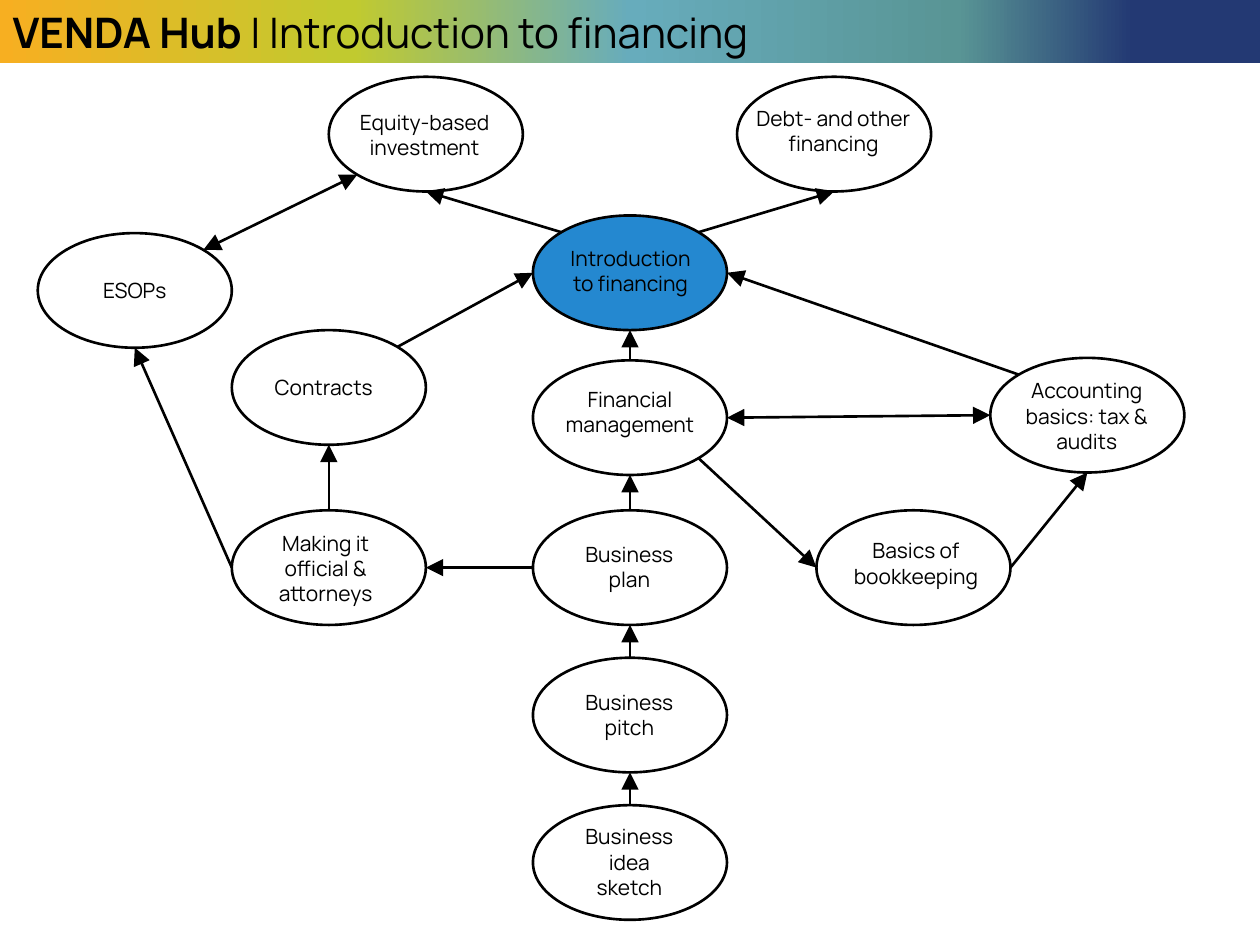
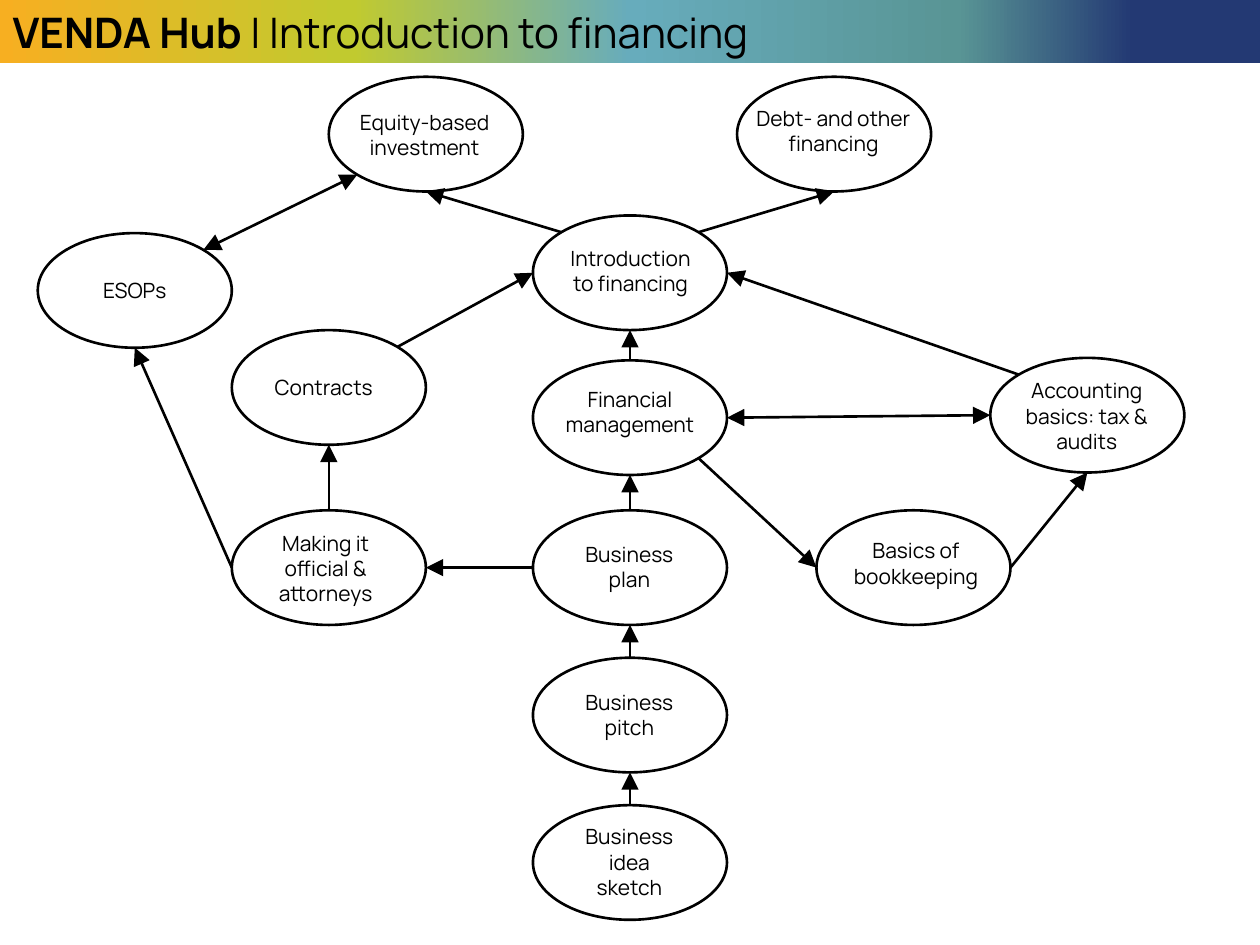
from collections import namedtuple
from math import cos, pi, sin

from lxml.etree import SubElement
from pptx import Presentation
from pptx.dml.color import RGBColor
from pptx.enum.shapes import MSO_CONNECTOR, MSO_SHAPE
from pptx.enum.text import MSO_ANCHOR, MSO_AUTO_SIZE, PP_ALIGN
from pptx.oxml.ns import qn
from pptx.util import Inches, Pt

BLACK = RGBColor(0x00, 0x00, 0x00)
HIGHLIGHT = RGBColor(0x24, 0x88, 0xD0)
BAND_STOPS = [
    (0, RGBColor(0xF7, 0xAF, 0x21)),
    (28, RGBColor(0xC1, 0xCA, 0x2F)),
    (50, RGBColor(0x67, 0xAC, 0xBC)),
    (76, RGBColor(0x59, 0x95, 0x95)),
    (90, RGBColor(0x23, 0x39, 0x73)),
]
FONT = "Manrope"
SLIDE_WIDTH, SLIDE_HEIGHT = 10, 7.5
BAND_HEIGHT = 0.5
OVAL_WIDTH, OVAL_HEIGHT = 1.54, 0.91
LINE_WIDTH = 1.5
TOP, TOP_LEFT, LEFT, BOTTOM_LEFT, BOTTOM, BOTTOM_RIGHT, RIGHT, TOP_RIGHT = range(8)

Topic = namedtuple("Topic", "left top label label_dx label_dy label_width lines")
TOPICS = {
    "idea": Topic(4.23, 5.89, "Business idea sketch", 0.27, 0.1, 0.99, 3),
    "pitch": Topic(4.23, 4.72, "Business pitch", 0.27, 0.2, 0.99, 2),
    "plan": Topic(4.23, 3.55, "Business plan", 0.27, 0.2, 0.99, 2),
    "intro": Topic(4.23, 1.21, "Introduction to financing", 0.14, 0.19, 1.27, 2),
    "bookkeeping": Topic(6.48, 3.55, "Basics of bookkeeping", 0.15, 0.17, 1.28, 2),
    "official": Topic(1.84, 3.55, "Making it official & attorneys", 0.23, 0.11, 1.03, 3),
    "accounting": Topic(7.86, 2.34, "Accounting basics: tax & audits", 0.13, 0.11, 1.27, 3),
    "contracts": Topic(1.84, 2.12, "Contracts", 0.1, 0.3, 1.26, 1),
    "equity": Topic(2.61, 0.11, "Equity-based\ninvestment", 0.06, 0.21, 1.4, 2),
    "debt": Topic(5.85, 0.11, "Debt- and other financing", 0.03, 0.18, 1.47, 2),
    "management": Topic(4.23, 2.36, "Financial management", 0.03, 0.16, 1.48, 2),
    "esops": Topic(0.3, 1.35, "ESOPs", 0.14, 0.3, 1.26, 1),
}
LINKS = [
    ("idea", TOP, "pitch", BOTTOM, False),
    ("pitch", TOP, "plan", BOTTOM, False),
    ("plan", TOP, "management", BOTTOM, False),
    ("management", TOP, "intro", BOTTOM, False),
    ("intro", TOP_RIGHT, "debt", BOTTOM, False),
    ("intro", TOP_LEFT, "equity", BOTTOM, False),
    ("plan", LEFT, "official", RIGHT, False),
    ("management", BOTTOM_RIGHT, "bookkeeping", LEFT, False),
    ("bookkeeping", RIGHT, "accounting", BOTTOM, False),
    ("official", TOP, "contracts", BOTTOM, False),
    ("contracts", TOP_RIGHT, "intro", LEFT, False),
    ("accounting", TOP_LEFT, "intro", RIGHT, False),
    ("equity", BOTTOM_LEFT, "esops", TOP_RIGHT, True),
    ("official", LEFT, "esops", BOTTOM, False),
    ("accounting", LEFT, "management", RIGHT, True),
]


def style_run(run, size, bold=False):
    run.font.name = FONT
    run.font.size = Pt(size)
    run.font.bold = bold
    run.font.color.rgb = BLACK


def add_title_band(slide, left, top, width, height):
    band = slide.shapes.title
    band.left, band.top = Inches(left), Inches(top)
    band.width, band.height = Inches(width), Inches(height)
    band.fill.gradient()
    band.fill.gradient_angle = 0
    stops = band._element.spPr.find(qn("a:gradFill")).find(qn("a:gsLst"))
    for stop in list(stops):
        stops.remove(stop)
    for percent, color in BAND_STOPS:
        stop = SubElement(stops, qn("a:gs"), pos=str(percent * 1000))
        SubElement(stop, qn("a:srgbClr"), val=str(color))

    frame = band.text_frame
    frame.auto_size = MSO_AUTO_SIZE.NONE
    frame.vertical_anchor = MSO_ANCHOR.MIDDLE
    heading = frame.paragraphs[0]
    heading.alignment = PP_ALIGN.LEFT
    for text, bold in [("VENDA Hub ", True), ("| Introduction to financing", False)]:
        run = heading.add_run()
        run.text = text
        style_run(run, 24, bold)


def add_topic(slide, topic, left, top, highlighted):
    oval = slide.shapes.add_shape(
        MSO_SHAPE.OVAL, Inches(left), Inches(top), Inches(OVAL_WIDTH), Inches(OVAL_HEIGHT)
    )
    oval.shadow.inherit = False
    oval.line.color.rgb = BLACK
    oval.line.width = Pt(LINE_WIDTH)
    if highlighted:
        oval.fill.solid()
        oval.fill.fore_color.rgb = HIGHLIGHT
    else:
        oval.fill.background()

    label = slide.shapes.add_textbox(
        Inches(left + topic.label_dx), Inches(top + topic.label_dy),
        Inches(topic.label_width), Inches(0.1 + 0.2 * topic.lines),
    )
    frame = label.text_frame
    frame.word_wrap = True
    frame.auto_size = MSO_AUTO_SIZE.SHAPE_TO_FIT_TEXT
    frame.text = topic.label
    for paragraph in frame.paragraphs:
        paragraph.alignment = PP_ALIGN.CENTER
        for run in paragraph.runs:
            style_run(run, 12)
    return oval


def site_point(oval, site):
    angle = site * pi / 4
    x = oval.left + oval.width / 2 * (1 - sin(angle))
    y = oval.top + oval.height / 2 * (1 - cos(angle))
    return round(x), round(y)


def add_link(slide, source, source_site, target, target_site, two_way):
    arrow = slide.shapes.add_connector(
        MSO_CONNECTOR.STRAIGHT,
        *site_point(source, source_site), *site_point(target, target_site),
    )
    arrow.line.color.rgb = BLACK
    arrow.line.width = Pt(LINE_WIDTH)
    outline = arrow._element.spPr.find(qn("a:ln"))
    for tag in ["a:headEnd", "a:tailEnd"] if two_way else ["a:tailEnd"]:
        SubElement(outline, qn(tag), type="triangle", w="lg", len="lg")
    SubElement(arrow._element.spPr, qn("a:effectLst"))

    ends = arrow._element.find(qn("p:nvCxnSpPr")).find(qn("p:cNvCxnSpPr"))
    for tag, oval, site in [("a:stCxn", source, source_site), ("a:endCxn", target, target_site)]:
        SubElement(ends, qn(tag), id=str(oval.shape_id), idx=str(site))


def add_topic_map(slide, left, top, current):
    ovals = {
        key: add_topic(slide, topic, left + topic.left, top + topic.top, key == current)
        for key, topic in TOPICS.items()
    }
    for source, source_site, target, target_site, two_way in LINKS:
        add_link(slide, ovals[source], source_site, ovals[target], target_site, two_way)


def add_map_slide(deck, current=None):
    slide = deck.slides.add_slide(deck.slide_layouts[5])
    add_title_band(slide, 0, 0, SLIDE_WIDTH, BAND_HEIGHT)
    add_topic_map(slide, 0, BAND_HEIGHT, current)


def main():
    deck = Presentation()
    deck.slide_width, deck.slide_height = Inches(SLIDE_WIDTH), Inches(SLIDE_HEIGHT)
    add_map_slide(deck, current="intro")
    add_map_slide(deck)
    deck.save("out.pptx")


if __name__ == "__main__":
    main()
